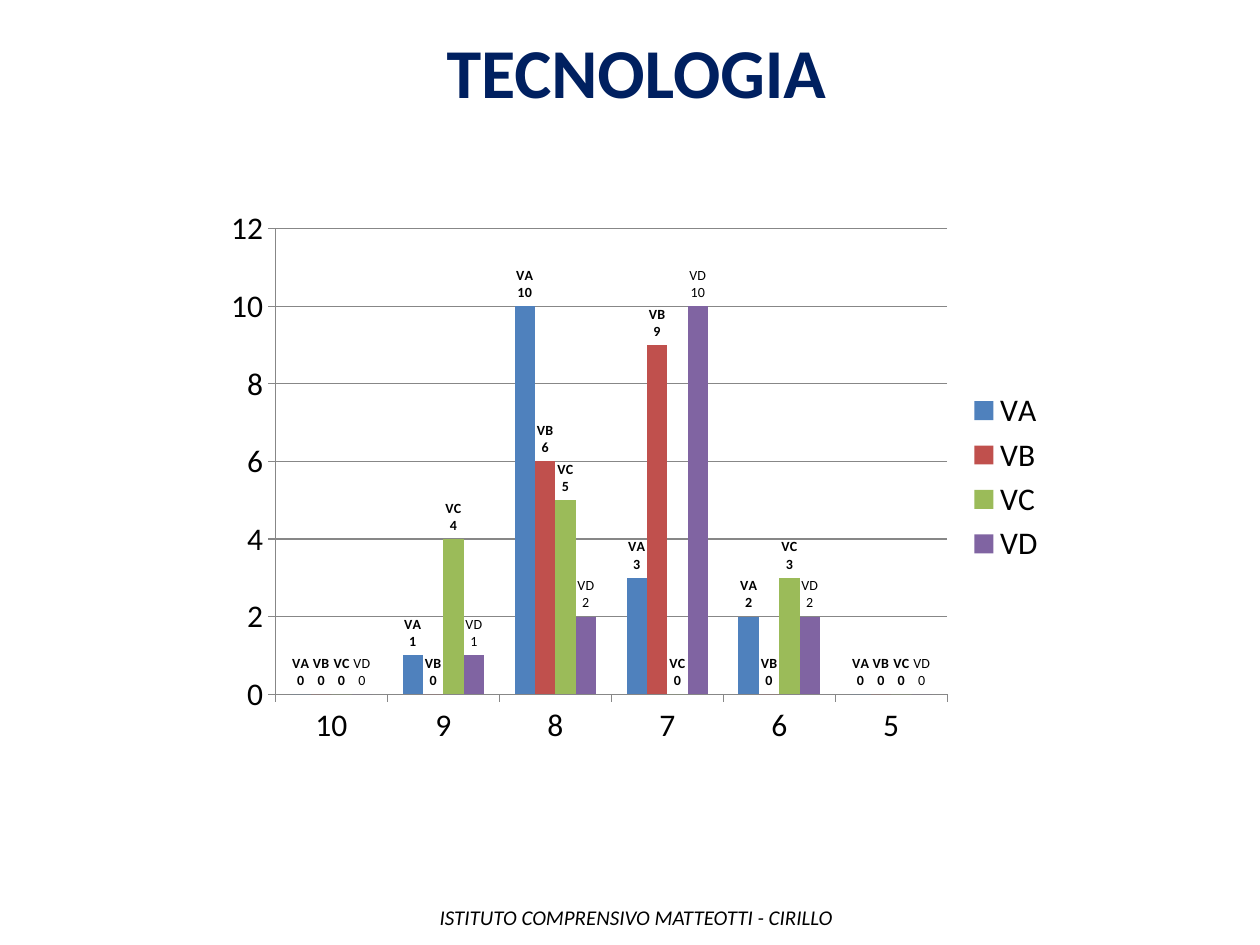
from lxml.etree import Element
from pptx import Presentation
from pptx.chart.data import CategoryChartData
from pptx.dml.color import RGBColor
from pptx.enum.chart import (XL_CHART_TYPE as ChartType, XL_LABEL_POSITION as LabelPosition,
                             XL_LEGEND_POSITION as LegendPosition, XL_TICK_MARK as TickMark)
from pptx.enum.text import MSO_ANCHOR as Anchor, PP_ALIGN as Align
from pptx.oxml.ns import qn
from pptx.util import Inches, Pt

GRADES = ["10", "9", "8", "7", "6", "5"]
CLASSES = [
    # class, pupils per grade, colour, bold labels
    ("VA", [0, 1, 10, 3, 2, 0], "4F81BD", True),
    ("VB", [0, 0, 6, 9, 0, 0], "C0504D", True),
    ("VC", [0, 4, 5, 0, 3, 0], "9BBB59", True),
    ("VD", [0, 1, 2, 10, 2, 0], "8064A2", False),
]


def color(hex_code):
    return RGBColor.from_string(hex_code)


class GradeSlide:
    FONT, TEXT, HEADING, LINE = "Calibri", "000000", "002060", "878787"

    def __init__(self, prs):
        self.width, self.height = prs.slide_width, prs.slide_height
        self.slide = prs.slides.add_slide(prs.slide_layouts[5])

    def box(self, left, top, width, height):
        """Turn shares of the slide's size into lengths."""
        return (int(left * self.width), int(top * self.height),
                int(width * self.width), int(height * self.height))

    def style(self, font, size, hex_code=TEXT, bold=False, italic=False):
        font.name, font.size = self.FONT, Pt(size)
        font.bold, font.italic = bold, italic
        font.color.rgb = color(hex_code)

    def centred_text(self, frame, text, **look):
        frame.word_wrap = True
        frame.vertical_anchor = Anchor.MIDDLE
        paragraph = frame.paragraphs[0]
        paragraph.alignment = Align.CENTER
        run = paragraph.add_run()
        run.text = text
        self.style(run.font, **look)

    def title(self, text, share):
        heading = self.slide.shapes.title
        heading.left, heading.top, heading.width, heading.height = self.box(*share)
        self.centred_text(heading.text_frame, text, size=40, hex_code=self.HEADING, bold=True)

    def footer(self, text, share):
        school = self.slide.shapes.add_textbox(*self.box(*share))
        self.centred_text(school.text_frame, text, size=12, italic=True)

    def chart(self, categories, rows, share):
        data = CategoryChartData()
        data.categories = categories
        for name, values, *_ in rows:
            data.add_series(name, values)
        chart = self.slide.shapes.add_chart(
            ChartType.COLUMN_CLUSTERED, *self.box(*share), data).chart
        self.style(chart.font, 18)
        chart.has_title = False
        chart.has_legend = True
        chart.legend.position = LegendPosition.RIGHT
        chart.legend.include_in_layout = False

        for axis in (chart.category_axis, chart.value_axis):
            axis.major_tick_mark = TickMark.OUTSIDE
            axis.minor_tick_mark = TickMark.NONE
            self.hairline(axis.format.line)
        chart.value_axis.has_major_gridlines = True
        self.hairline(chart.value_axis.major_gridlines.format.line)

        plot = chart.plots[0]
        plot.vary_by_categories = False
        plot.gap_width, plot.overlap = 150, 0
        for series, (_, _, hex_code, bold) in zip(plot.series, rows):
            series.format.fill.solid()
            series.format.fill.fore_color.rgb = color(hex_code)
            self.labels(series.data_labels, bold)

    def hairline(self, line):
        line.width = Pt(0.75)
        line.color.rgb = color(self.LINE)

    def labels(self, labels, bold):
        """Show the class name above the value, over each column."""
        self.style(labels.font, 8, bold=bold)
        labels.show_value = labels.show_series_name = True
        labels.position = LabelPosition.OUTSIDE_END
        separator = Element(qn("c:separator"))
        separator.text = "\n"
        labels._element.find(qn("c:showBubbleSize")).addnext(separator)


def main():
    prs = Presentation()
    prs.slide_width, prs.slide_height = Inches(10), Inches(7.5)
    page = GradeSlide(prs)
    page.title("TECNOLOGIA", (0.14, 0.02, 0.73, 0.11))
    page.footer("ISTITUTO COMPRENSIVO MATTEOTTI - CIRILLO", (0.3, 0.95, 0.41, 0.04))
    page.chart(GRADES, CLASSES, (0.17, 0.21, 0.67, 0.59))
    prs.save("out.pptx")


if __name__ == "__main__":
    main()
